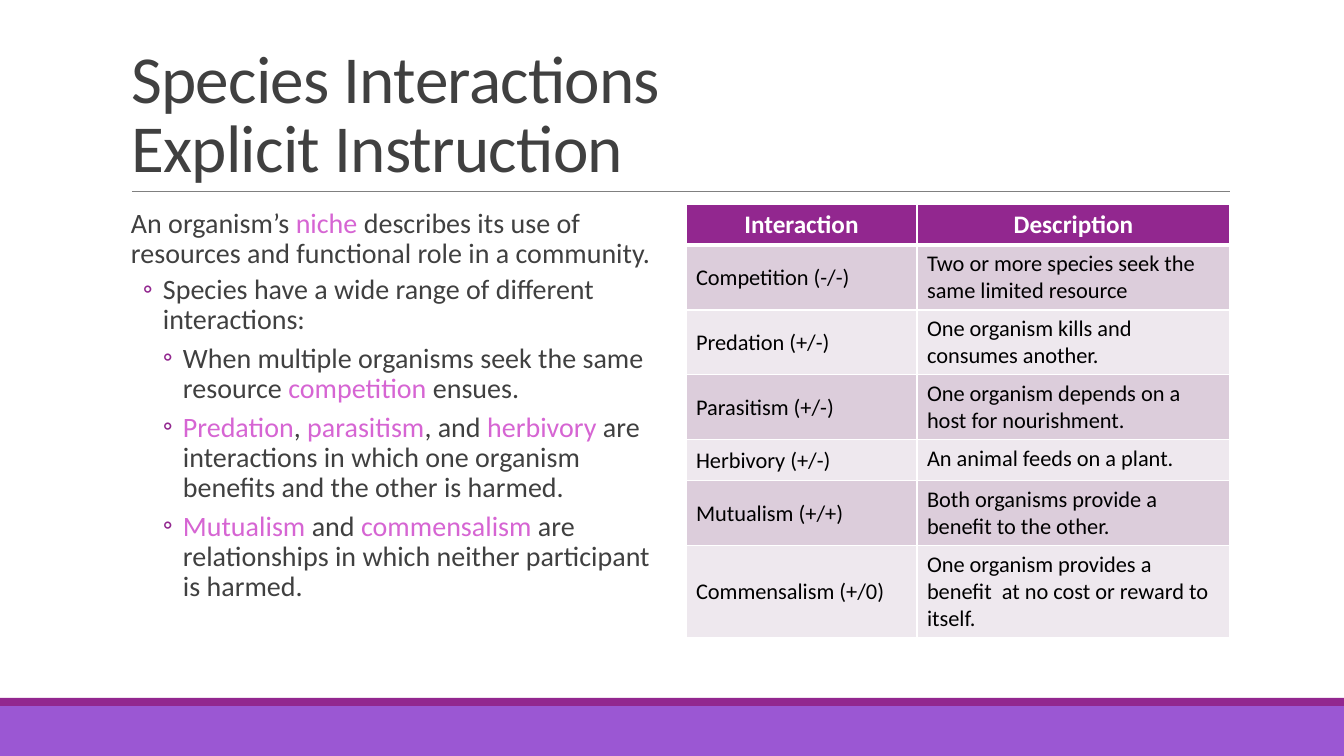
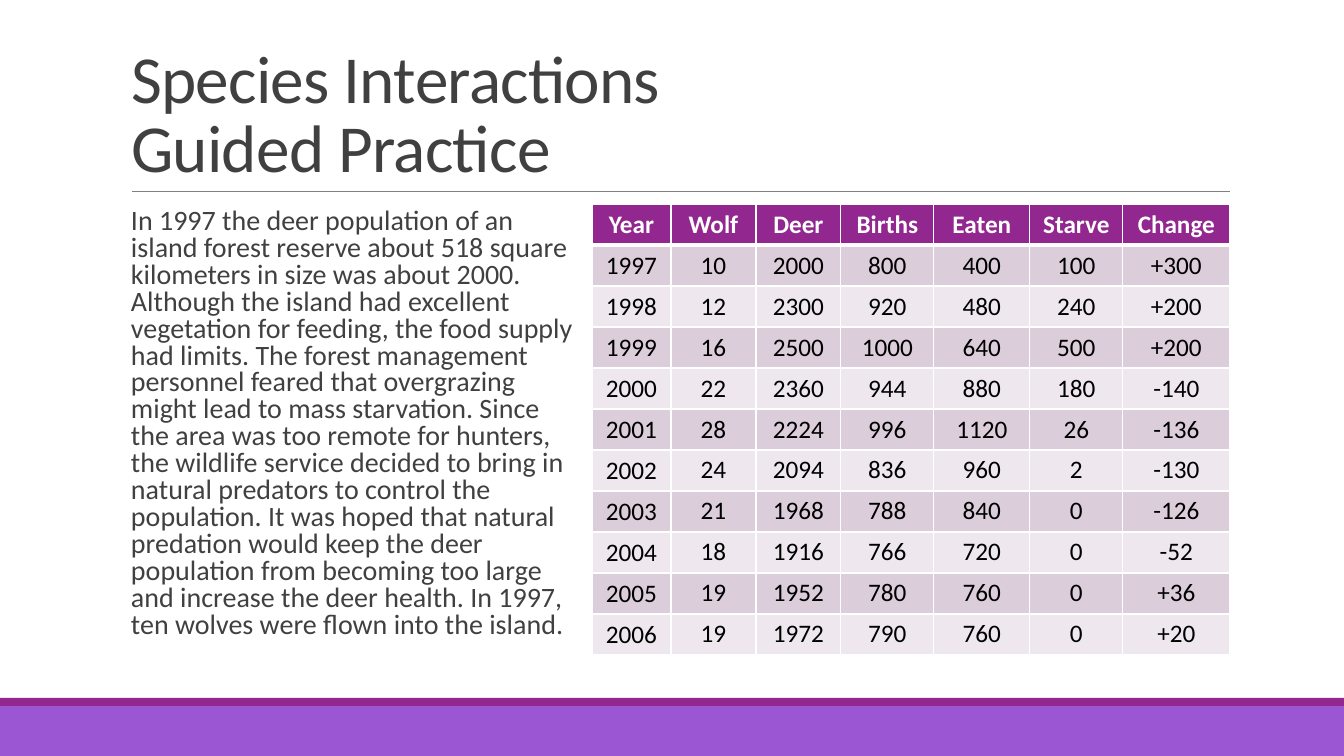
import pptx
import pptx.util
import pptx.dml.color
import pptx.enum.shapes
import pptx.enum.text
import pptx.oxml
import pptx.oxml.ns
import lxml.etree

RGBColor = pptx.dml.color.RGBColor
Pt = pptx.util.Pt
ALIGN = pptx.enum.text.PP_ALIGN
ANCHOR = pptx.enum.text.MSO_ANCHOR
qn = pptx.oxml.ns.qn

PLUM = RGBColor(0x92, 0x27, 0x8F)
VIOLET = RGBColor(0x9B, 0x57, 0xD3)
PINK = RGBColor(0xD6, 0x65, 0xD3)
DARK = RGBColor(0x40, 0x40, 0x40)
GRAY = RGBColor(0x80, 0x80, 0x80)
BLACK = RGBColor(0x00, 0x00, 0x00)
WHITE = RGBColor(0xFF, 0xFF, 0xFF)
ROW_FILLS = [RGBColor(0xEE, 0xE8, 0xEE), RGBColor(0xDC, 0xCD, 0xDB)]
FONT = "Calibri"
LEFT, RIGHT, TOP = 121, 1230, 204
INDENTS = [(10, 10, " ", 12, 2), (42, 20, "◦", 2, 4), (62, 20, "◦", 2, 4)]


def px(n):
    return round(n * 12192000 / 1344)


def style(r, size, color, bold=False):
    r.font.name = FONT
    r.font.size = Pt(size)
    r.font.bold = bold
    r.font.color.rgb = color


pages = [
    {
        "title": "Species Interactions\vExplicit Instruction",
        "width": 544,
        "height": 444,
        "spacing": 0.9,
        "body": [
            (0, "An organism’s *niche* describes its use of resources and functional role in a community."),
            (1, "Species have a wide range of different interactions:"),
            (2, "When multiple organisms seek the same resource *competition* ensues."),
            (2, "*Predation*, *parasitism*, and *herbivory* are interactions in which one organism "
                "benefits and the other is harmed."),
            (2, "*Mutualism* and *commensalism* are relationships in which neither participant is harmed."),
        ],
        "cols": [231, 313],
        "rows": [41, 65, 65, 65, 41, 65, 92],
        "size": 16,
        "align": ALIGN.LEFT,
        "cells": [
            ("Interaction", "Description"),
            ("Competition (-/-)", "Two or more species seek the same limited resource"),
            ("Predation (+/-)", "One organism kills and consumes another."),
            ("Parasitism (+/-)", "One organism depends on a host for nourishment."),
            ("Herbivory (+/-)", "An animal feeds on a plant."),
            ("Mutualism (+/+)", "Both organisms provide a benefit to the other."),
            ("Commensalism (+/0)", "One organism provides a benefit  at no cost or reward to itself."),
        ],
    },
    {
        "title": "Species Interactions\vGuided Practice",
        "width": 455,
        "height": 480,
        "spacing": 0.8,
        "body": [
            (0, "In 1997 the deer population of an island forest reserve about 518 square kilometers "
                "in size was about 2000. Although the island had excellent vegetation for feeding, "
                "the food supply had limits. The forest management personnel feared that overgrazing "
                "might lead to mass starvation. Since the area was too remote for hunters, the "
                "wildlife service decided to bring in natural predators to control the population. "
                "It was hoped that natural predation would keep the deer population from becoming "
                "too large and increase the deer health. In 1997, ten wolves were flown into the island."),
        ],
        "cols": [79, 85, 85, 93, 96, 93, 107],
        "rows": [41] * 11,
        "size": 18,
        "align": ALIGN.CENTER,
        "cells": [
            ("Year", "Wolf", "Deer", "Births", "Eaten", "Starve", "Change"),
            (1997, 10, 2000, 800, 400, 100, "+300"),
            (1998, 12, 2300, 920, 480, 240, "+200"),
            (1999, 16, 2500, 1000, 640, 500, "+200"),
            (2000, 22, 2360, 944, 880, 180, "-140"),
            (2001, 28, 2224, 996, 1120, 26, "-136"),
            (2002, 24, 2094, 836, 960, 2, "-130"),
            (2003, 21, 1968, 788, 840, 0, "-126"),
            (2004, 18, 1916, 766, 720, 0, "-52"),
            (2005, 19, 1952, 780, 760, 0, "+36"),
            (2006, 19, 1972, 790, 760, 0, "+20"),
        ],
    },
]

prs = pptx.Presentation()
prs.slide_width, prs.slide_height = px(1344), px(756)
layout = prs.slide_layouts[5]
slides = [prs.slides.add_slide(layout) for page in pages]

shapes = slides[0].shapes
for top, height, color in [(706, 50, VIOLET), (698, 8, PLUM)]:
    band = shapes.add_shape(pptx.enum.shapes.MSO_SHAPE.RECTANGLE, 0, px(top), px(1344), px(height))
    band.shadow.inherit = False
    band.fill.solid()
    band.fill.fore_color.rgb = color
    band.line.fill.background()
    layout.shapes.element.append(band.element)
rule = shapes.add_connector(pptx.enum.shapes.MSO_CONNECTOR.STRAIGHT, px(132), px(191), px(RIGHT), px(191))
rule.line.color.rgb = GRAY
rule.line.width = Pt(0.5)
lxml.etree.SubElement(rule.element.spPr, qn("a:effectLst"))
layout.shapes.element.append(rule.element)

for s, page in zip(slides, pages):
    title = s.shapes.title
    title.left, title.top, title.width, title.height = px(LEFT), px(31), px(1109), px(160)
    tf = title.text_frame
    tf.text = page["title"]
    tf.auto_size = pptx.enum.text.MSO_AUTO_SIZE.NONE
    tf.vertical_anchor = ANCHOR.BOTTOM
    p = tf.paragraphs[0]
    p.alignment = ALIGN.LEFT
    p.line_spacing = 0.85
    for r in p.runs:
        style(r, 48, DARK)
        r.font._element.set("spc", "-50")

    tf = s.shapes.add_textbox(px(LEFT), px(TOP), px(page["width"]), px(page["height"])).text_frame
    tf.word_wrap = True
    tf.margin_left = tf.margin_right = 0
    tf.margin_top = tf.margin_bottom = px(5)
    for i, (level, text) in enumerate(page["body"]):
        p = tf.add_paragraph() if i else tf.paragraphs[0]
        margin, hang, bullet, before, after = INDENTS[level]
        p.level = level
        p.line_spacing = page["spacing"]
        p.space_before, p.space_after = Pt(before), Pt(after)
        pPr = p._p.get_or_add_pPr()
        pPr.set("marL", str(px(margin)))
        pPr.set("indent", str(-px(hang)))
        bullet_color = lxml.etree.SubElement(pPr, qn("a:buClr"))
        lxml.etree.SubElement(bullet_color, qn("a:srgbClr"), val=str(PLUM))
        lxml.etree.SubElement(pPr, qn("a:buFont"), typeface=FONT)
        lxml.etree.SubElement(pPr, qn("a:buChar"), char=bullet)
        for j, part in enumerate(text.split("*")):
            if part:
                r = p.add_run()
                r.text = part
                style(r, 20, PINK if j % 2 else DARK)

    cols, rows = page["cols"], page["rows"]
    table = s.shapes.add_table(len(rows), len(cols), px(RIGHT - sum(cols)), px(TOP),
                               px(sum(cols)), px(sum(rows))).table
    for column, width in zip(table.columns, cols):
        column.width = px(width)
    for i, (row, height) in enumerate(zip(table.rows, rows)):
        row.height = px(height)
        for j, value in enumerate(page["cells"][i]):
            cell = table.cell(i, j)
            header = i == 0
            cell.text_frame.text = str(value)
            p = cell.text_frame.paragraphs[0]
            p.alignment = ALIGN.CENTER if header else page["align"]
            style(p.runs[0], 18 if header else page["size"], WHITE if header else BLACK, header)
            if j == 0 and not header:
                cell.vertical_anchor = ANCHOR.MIDDLE
            tcPr = cell._tc.get_or_add_tcPr()
            for side in ("L", "R", "T", "B"):
                thick = (i, side) in [(0, "B"), (1, "T")]
                ln = lxml.etree.SubElement(tcPr, qn("a:ln" + side), w=str(Pt(3 if thick else 1)))
                fill = lxml.etree.SubElement(ln, qn("a:solidFill"))
                lxml.etree.SubElement(fill, qn("a:srgbClr"), val=str(WHITE))
            cell.fill.solid()
            cell.fill.fore_color.rgb = PLUM if header else ROW_FILLS[i % 2]

prs.save("out.pptx")
